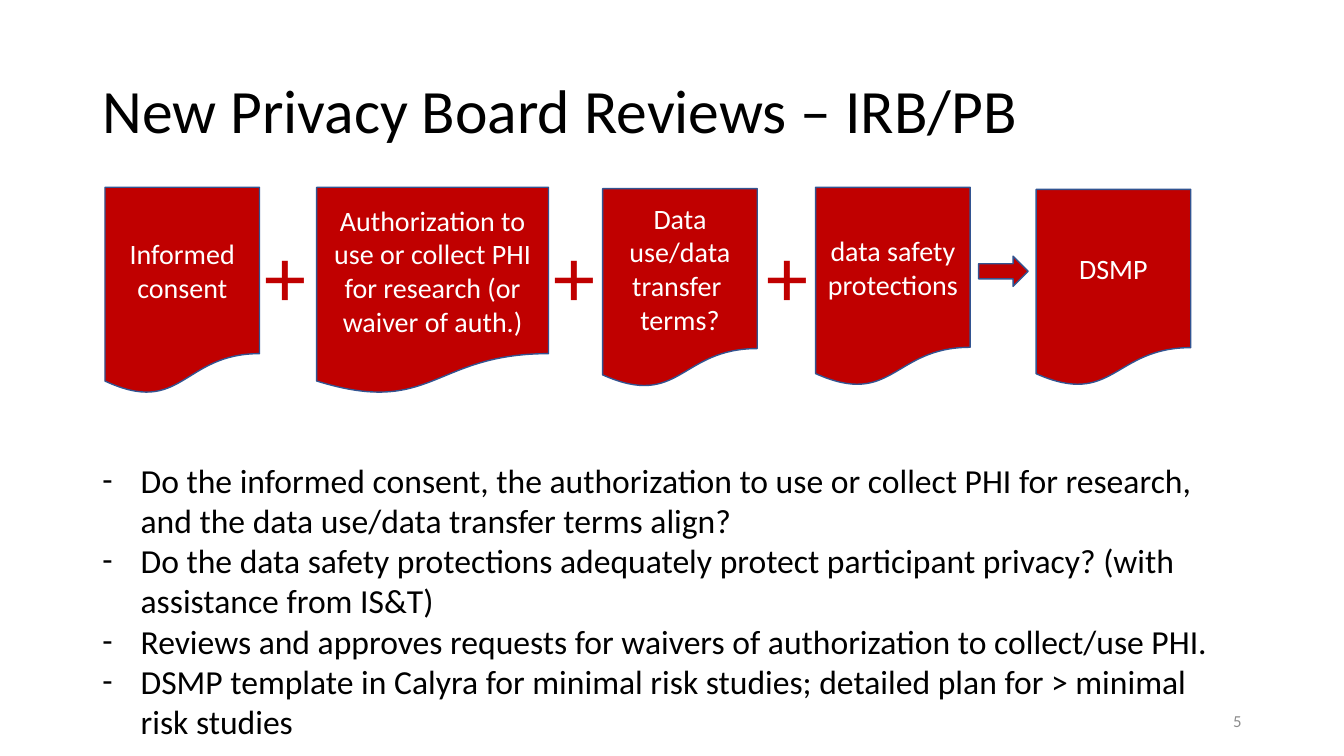
from pptx import Presentation
from pptx.dml.color import RGBColor
from pptx.enum.shapes import MSO_SHAPE
from pptx.enum.text import MSO_ANCHOR, PP_ALIGN
from pptx.oxml.ns import qn
from pptx.util import Inches, Pt
from lxml import etree

DOC = MSO_SHAPE.FLOWCHART_DOCUMENT
ARROW = MSO_SHAPE.RIGHT_ARROW
MID, TOP = MSO_ANCHOR.MIDDLE, MSO_ANCHOR.TOP
LEFT, CENTER, RIGHT = PP_ALIGN.LEFT, PP_ALIGN.CENTER, PP_ALIGN.RIGHT

COLORS = {"ink": "000000", "red": "C00000", "edge": "325491",
          "white": "FFFFFF", "gray": "8C8C8C"}
COLS, ROWS = 32, 18

PAPERS = [
    (2.5, 4.46, 3.68, 4.94, "Informed\nconsent"),
    (7.54, 4.46, 5.52, 4.94,
     "Authorization to use or collect PHI for research (or waiver of auth.)"),
    (14.35, 4.49, 3.68, 4.75, "Data use/data transfer \nterms?"),
    (19.42, 4.46, 3.68, 4.75, "data safety protections"),
    (24.67, 4.51, 3.68, 4.7, "DSMP"),
]
PLUSES = [6.07, 12.94, 18.02]
POINTS = [
    "Do the informed consent, the authorization to use or collect PHI for "
    "research, and the data use/data transfer terms align?",
    "Do the data safety protections adequately protect participant privacy? "
    "(with assistance from IS&T)",
    "Reviews and approves requests for waivers of authorization to "
    "collect/use PHI.",
    "DSMP template in Calyra for minimal risk studies; detailed plan for "
    "> minimal risk studies",
]


class Deck:
    font = "Calibri"

    def __init__(self):
        self.prs = Presentation()
        self.prs.slide_width = Inches(13.33)
        self.prs.slide_height = Inches(7.5)
        self.slide = self.prs.slides.add_slide(self.prs.slide_layouts[6])

    def box(self, x, y, w, h):
        col = self.prs.slide_width / COLS
        row = self.prs.slide_height / ROWS
        return [round(n) for n in (x * col, y * row, w * col, h * row)]

    def color(self, name):
        return RGBColor.from_string(COLORS[name])

    def label(self, shape, text, size, color, align, anchor):
        frame = shape.text_frame
        frame.text = text
        frame.word_wrap = True
        frame.vertical_anchor = anchor
        for para in frame.paragraphs:
            para.alignment = align
            for run in para.runs:
                run.font.name = self.font
                run.font.size = Pt(size)
                run.font.color.rgb = self.color(color)
        return frame.paragraphs

    def text(self, area, text, size, color="ink", align=LEFT, anchor=TOP):
        shape = self.slide.shapes.add_textbox(*self.box(*area))
        return self.label(shape, text, size, color, align, anchor)

    def shape(self, kind, area, text=""):
        shape = self.slide.shapes.add_shape(kind, *self.box(*area))
        shape.shadow.inherit = False
        shape.fill.solid()
        shape.fill.fore_color.rgb = self.color("red")
        shape.line.color.rgb = self.color("edge")
        shape.line.width = Pt(1)
        if text:
            self.label(shape, text, 20, "white", CENTER, MID)

    def bullets(self, area, items, size):
        for para in self.text(area, "\n".join(items), size):
            props = para._p.get_or_add_pPr()
            props.set("marL", str(Inches(0.38)))
            props.set("indent", str(-Inches(0.38)))
            etree.SubElement(props, qn("a:buFont"), typeface=self.font)
            etree.SubElement(props, qn("a:buChar"), char="-")


def main():
    deck = Deck()
    title = deck.text((2.2, 0.96, 27.6, 3.48),
                      "New Privacy Board Reviews – IRB/PB", 44, anchor=MID)
    title[0].line_spacing = 0.9
    deck.text((22.6, 16.68, 7.2, 0.96), "5", 12, "gray", RIGHT, MID)
    deck.bullets((2.2, 10.82, 27.6, 7.04), POINTS, 24)
    for *area, words in PAPERS:
        deck.shape(DOC, area, words)
    for left in PLUSES:
        deck.text((left, 5.2, 1.4, 2.66), "+", 60, "red")
    deck.shape(ARROW, (23.3, 6.1, 1.18, 0.72))
    deck.prs.save("out.pptx")


if __name__ == "__main__":
    main()
